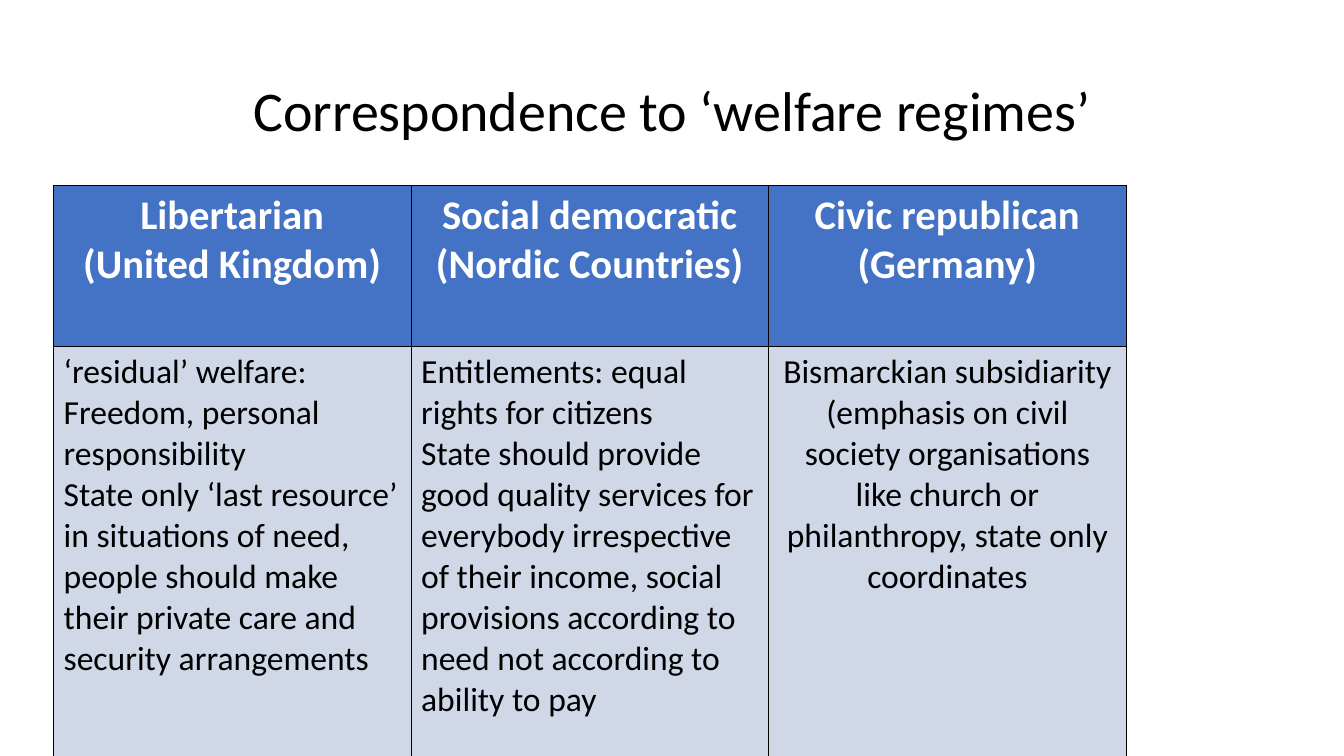
from lxml import etree
from pptx import Presentation
from pptx.dml.color import RGBColor
from pptx.enum.text import MSO_ANCHOR, PP_ALIGN
from pptx.oxml.ns import qn
from pptx.util import Cm, Pt

LEFT, CENTER = PP_ALIGN.LEFT, PP_ALIGN.CENTER
MIDDLE = MSO_ANCHOR.MIDDLE

BLACK = RGBColor(0x00, 0x00, 0x00)
WHITE = RGBColor(0xFF, 0xFF, 0xFF)
BLUE = RGBColor(0x44, 0x72, 0xC4)
PALE_BLUE = RGBColor(0xD0, 0xD8, 0xE8)

TITLE = "Correspondence to ‘welfare regimes’"
# Each regime: heading lines, description paragraphs, description alignment
REGIMES = [
    (
        ["Libertarian", "(United Kingdom)"],
        [
            "‘residual’ welfare:",
            "Freedom, personal responsibility",
            "State only ‘last resource’ in situations of need, people should "
            "make their private care and security arrangements",
        ],
        LEFT,
    ),
    (
        ["Social democratic", "(Nordic Countries)"],
        [
            "Entitlements: equal rights for citizens",
            "State should provide good quality services for everybody "
            "irrespective of their income, social provisions according to "
            "need not according to ability to pay",
        ],
        LEFT,
    ),
    (
        ["Civic republican (Germany)"],
        [
            "Bismarckian subsidiarity",
            "(emphasis on civil society organisations like church or "
            "philanthropy, state only coordinates",
        ],
        CENTER,
    ),
]

TITLE_FONT = {"name": "Calibri", "size": Pt(40), "bold": False}
HEADING_FONT = {"name": "Calibri", "size": Pt(29), "bold": True}
DESCRIPTION_FONT = {"name": "Calibri", "size": Pt(24), "bold": False}

COLUMN_WIDTH = Cm(9.01)
HEADING_HEIGHT, DESCRIPTION_HEIGHT = Cm(4.06), Cm(10.42)


def write(frame, lines, font_format, color, align):
    frame.text = "\n".join(lines)
    for paragraph in frame.paragraphs:
        paragraph.alignment = align
        for name, value in font_format.items():
            setattr(paragraph.font, name, value)
        paragraph.font.color.rgb = color


def paint_cell(cell, fill_color):
    """Give the cell thin black borders and a solid fill."""
    properties = cell._tc.get_or_add_tcPr()
    for side in ("a:lnL", "a:lnR", "a:lnT", "a:lnB"):
        border = etree.SubElement(properties, qn(side), w=str(Pt(1)))
        solid = etree.SubElement(border, qn("a:solidFill"))
        etree.SubElement(solid, qn("a:srgbClr"), val=str(BLACK))
    cell.fill.solid()
    cell.fill.fore_color.rgb = fill_color


def main():
    presentation = Presentation()
    presentation.slide_width, presentation.slide_height = Cm(33.87), Cm(19.05)
    slide = presentation.slides.add_slide(presentation.slide_layouts[5])

    title = slide.shapes.title
    title.left, title.top = Cm(2.33), Cm(1.01)
    title.width, title.height = Cm(29.21), Cm(3.68)
    title.text_frame.vertical_anchor = MIDDLE
    write(title.text_frame, [TITLE], TITLE_FONT, BLACK, CENTER)
    title.text_frame.paragraphs[0].line_spacing = 0.9

    regimes = slide.shapes.add_table(
        2, len(REGIMES), Cm(1.35), Cm(4.67),
        COLUMN_WIDTH * len(REGIMES), HEADING_HEIGHT + DESCRIPTION_HEIGHT,
    ).table
    regimes.rows[0].height = HEADING_HEIGHT
    regimes.rows[1].height = DESCRIPTION_HEIGHT

    for column, (heading, description, align) in enumerate(REGIMES):
        regimes.columns[column].width = COLUMN_WIDTH
        heading_cell = regimes.cell(0, column)
        description_cell = regimes.cell(1, column)
        write(heading_cell.text_frame, heading, HEADING_FONT, WHITE, CENTER)
        write(description_cell.text_frame, description, DESCRIPTION_FONT, BLACK, align)
        paint_cell(heading_cell, BLUE)
        paint_cell(description_cell, PALE_BLUE)

    presentation.save("out.pptx")


if __name__ == "__main__":
    main()
